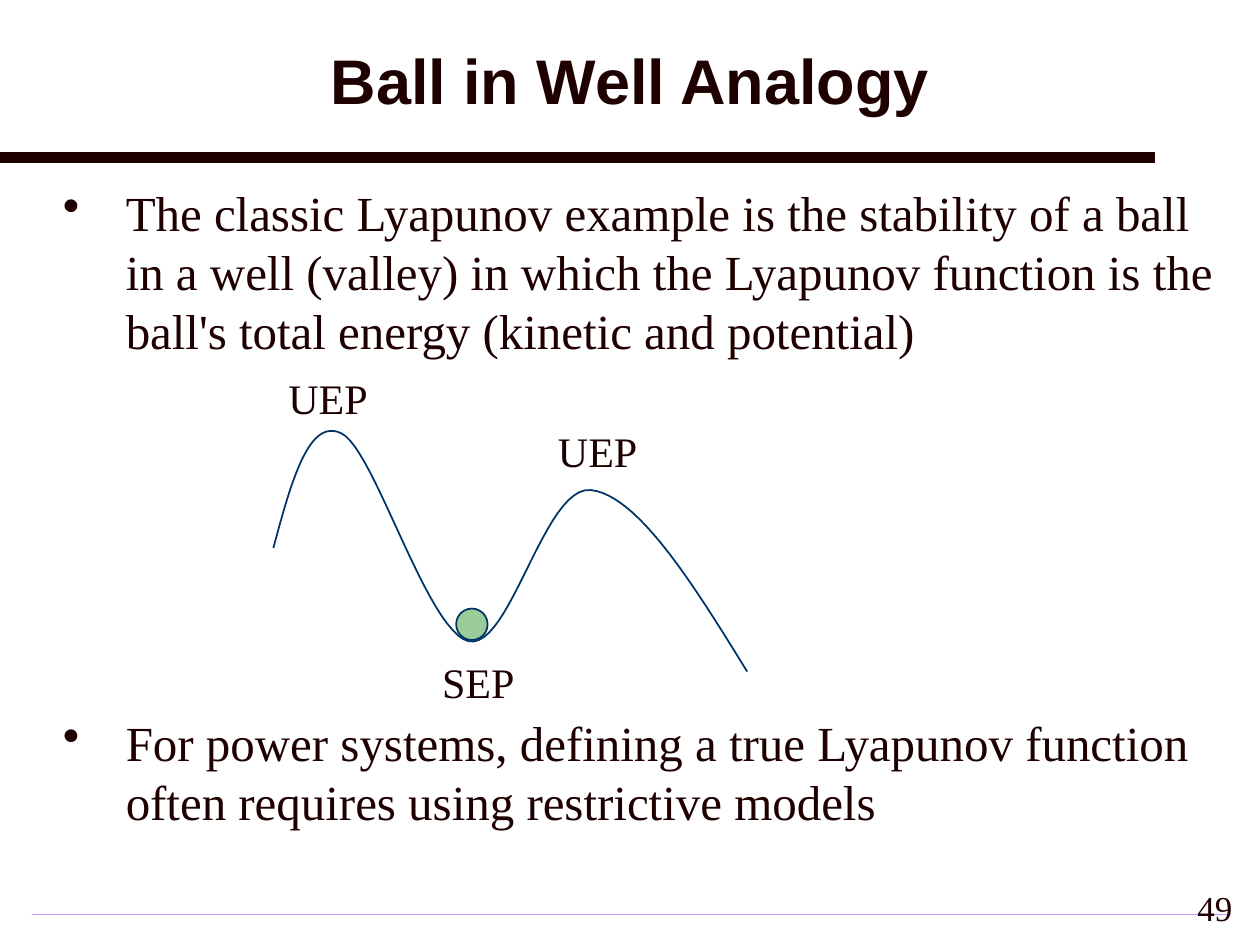
from dataclasses import dataclass

from lxml.etree import SubElement
from pptx import Presentation
from pptx.dml.color import RGBColor
from pptx.enum.shapes import MSO_CONNECTOR as Connector, MSO_SHAPE as Shape
from pptx.enum.text import MSO_ANCHOR as Anchor, PP_ALIGN as Align
from pptx.oxml.ns import qn
from pptx.util import Inches, Pt


@dataclass(frozen=True)
class Theme:
    """Colours, fonts and type sizes of the slide."""
    ink: RGBColor = RGBColor.from_string("1E0000")
    outline: RGBColor = RGBColor.from_string("003366")
    ball: RGBColor = RGBColor.from_string("99CC99")
    violet: RGBColor = RGBColor.from_string("CC99FF")
    pale_violet: RGBColor = RGBColor.from_string("F3EBFF")
    heading_font: str = "Arial"
    body_font: str = "Times New Roman"
    title_size: int = 36
    body_size: int = 28
    label_size: int = 24
    number_size: int = 20


class SlideBuilder:
    """Draws each kind of element on the current slide in one theme."""

    def __init__(self, slide, theme):
        self.slide = slide
        self.theme = theme

    def format_font(self, paragraph, size, name, bold=False):
        font = paragraph.font
        font.size, font.name, font.bold = Pt(size), name, bold
        font.color.rgb = self.theme.ink

    def title(self, text, *box):
        shape = self.slide.shapes.title
        shape.left, shape.top, shape.width, shape.height = map(Inches, box)
        shape.text_frame.text = text
        shape.text_frame.vertical_anchor = Anchor.MIDDLE
        paragraph = shape.text_frame.paragraphs[0]
        paragraph.alignment = Align.CENTER
        paragraph.line_spacing = 0.9
        self.format_font(paragraph, self.theme.title_size, self.theme.heading_font, True)

    def text(self, text, size, *box, align=Align.LEFT):
        frame = self.slide.shapes.add_textbox(*map(Inches, box)).text_frame
        frame.word_wrap = True
        frame.text = text
        for paragraph in frame.paragraphs:
            paragraph.alignment = align
            self.format_font(paragraph, size, self.theme.body_font)
        return frame

    def bullets(self, items, gap, *box):
        frame = self.text("\n".join(items), self.theme.body_size, *box)
        for index, paragraph in enumerate(frame.paragraphs):
            paragraph.space_before = Pt(gap if index else 0)
            properties = paragraph._p.get_or_add_pPr()
            properties.set("marL", str(Inches(0.5)))
            properties.set("indent", str(-Inches(0.5)))
            bullet = properties.makeelement(qn("a:buChar"), {"char": "•"})
            properties.insert_element_before(bullet, "a:tabLst", "a:defRPr", "a:extLst")

    def rule(self, start, end, width):
        line = self.slide.shapes.add_connector(
            Connector.STRAIGHT, *map(Inches, (*start, *end)))
        line.line.color.rgb = self.theme.ink
        line.line.width = Pt(width)
        SubElement(line._element.spPr, qn("a:effectLst"))

    def gradient_bar(self, *box):
        bar = self.slide.shapes.add_shape(Shape.RECTANGLE, *map(Inches, box))
        bar.shadow.inherit = False
        bar.line.fill.background()
        bar.fill.gradient()
        colours = self.theme.violet, self.theme.pale_violet
        for stop, colour in zip(bar.fill.gradient_stops, colours):
            stop.color.rgb = colour
        gradient = bar._element.spPr.find(qn("a:gradFill"))
        gradient.remove(gradient.find(qn("a:lin")))
        centre = SubElement(gradient, qn("a:path"), path="shape")
        SubElement(centre, qn("a:fillToRect"), dict.fromkeys("ltrb", "50000"))

    def outline(self, shape):
        shape.shadow.inherit = False
        shape.line.color.rgb = self.theme.outline
        shape.line.width = Pt(1)

    def curve(self, start, segments, steps=24):
        points = []
        current = start
        for first, second, end in segments:
            anchors = current, first, second, end
            for step in range(1, steps + 1):
                t = step / steps
                weights = (1 - t) ** 3, 3 * t * (1 - t) ** 2, 3 * t * t * (1 - t), t ** 3
                points.append(tuple(
                    Inches(sum(weight * anchor[axis]
                               for weight, anchor in zip(weights, anchors)))
                    for axis in (0, 1)))
            current = end
        builder = self.slide.shapes.build_freeform(*map(Inches, start))
        builder.add_line_segments(points, close=False)
        shape = builder.convert_to_shape()
        shape.fill.background()
        self.outline(shape)

    def circle(self, left, top, size):
        ball = self.slide.shapes.add_shape(
            Shape.OVAL, *map(Inches, (left, top, size, size)))
        ball.fill.solid()
        ball.fill.fore_color.rgb = self.theme.ball
        self.outline(ball)


def main():
    presentation = Presentation()
    presentation.slide_width, presentation.slide_height = Inches(10), Inches(7.5)
    slide = presentation.slides.add_slide(presentation.slide_layouts[5])
    theme = Theme()
    builder = SlideBuilder(slide, theme)

    builder.gradient_bar(0.25, 7.25, 9.5, 0.01)
    builder.rule((0, 1.25), (9.17, 1.25), 6)
    builder.title("Ball in Well Analogy", 0.25, 0.08, 9.5, 1.17)
    builder.bullets([
        "The classic Lyapunov example is the stability of a ball in a well (valley) "
        "in which the Lyapunov function is the ball's total energy (kinetic and potential)",
        "For power systems, defining a true Lyapunov function often requires "
        "using restrictive models",
    ], 202, 0.4, 1.4, 9.34, 5.3)

    builder.curve((2.17, 4.35), [
        ((2.31, 3.83), (2.45, 3.31), (2.71, 3.44)),
        ((2.97, 3.56), (3.39, 5.01), (3.72, 5.09)),
        ((4.05, 5.16), (4.32, 3.85), (4.69, 3.89)),
        ((5.06, 3.93), (5.5, 4.63), (5.93, 5.33)),
    ])
    builder.circle(3.62, 4.83, 0.25)
    for label, left, top, width in [
        ("SEP", 3.41, 5.16, 0.91),
        ("UEP", 4.33, 3.33, 0.92),
        ("UEP", 2.19, 2.91, 1.09),
    ]:
        builder.text(label, theme.label_size, left, top, width, 0.5)
    builder.text("49", theme.number_size, 9.3, 6.99, 0.58, 0.5, align=Align.RIGHT)

    presentation.save("out.pptx")


if __name__ == "__main__":
    main()
